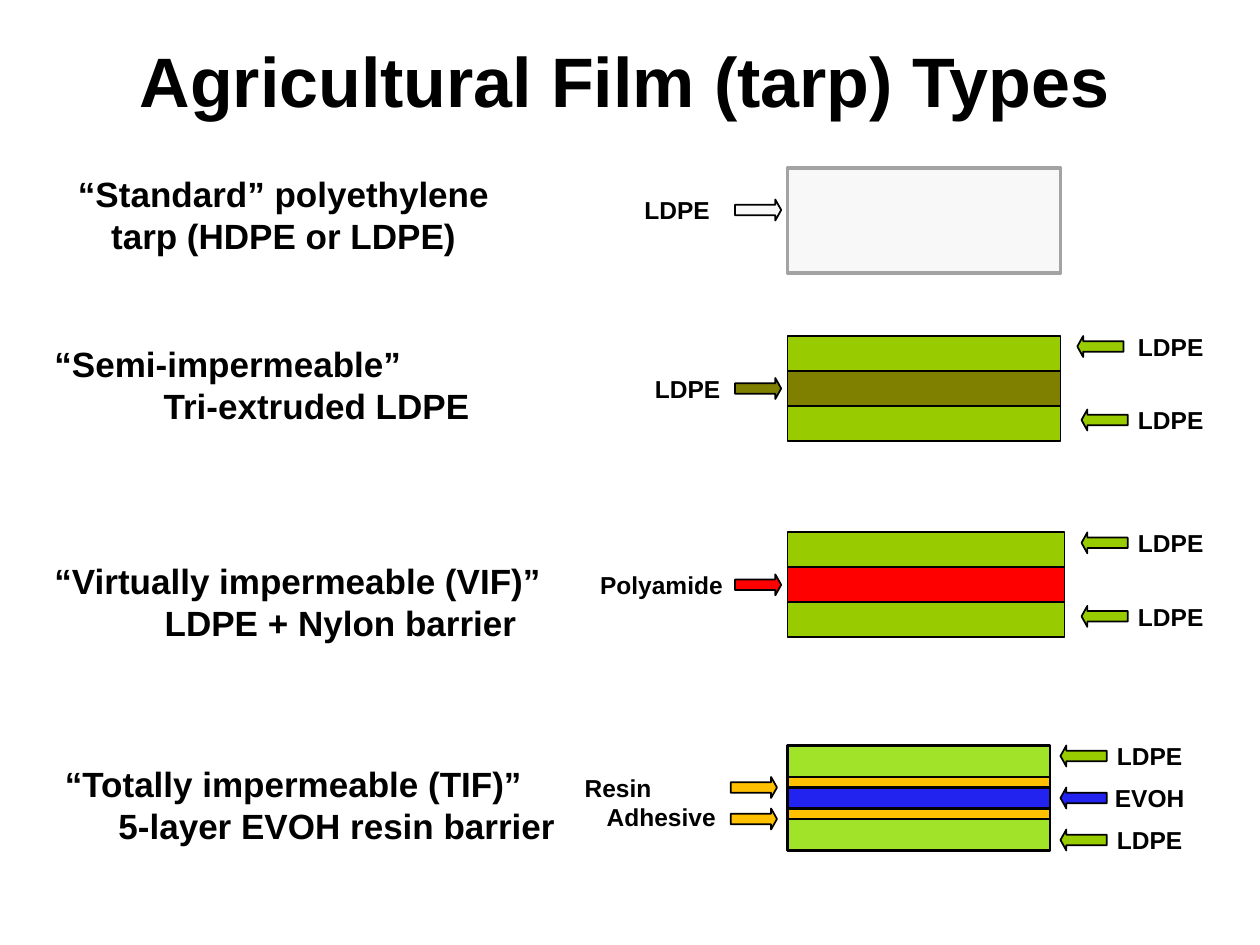
"""Build a slide that compares the layers of four agricultural film types."""
from dataclasses import dataclass
from typing import Any

from pptx import Presentation
from pptx.dml.color import RGBColor
from pptx.enum.shapes import MSO_SHAPE
from pptx.enum.text import MSO_ANCHOR, MSO_AUTO_SIZE, PP_ALIGN
from pptx.util import Emu, Inches, Pt


@dataclass(frozen=True)
class Theme:
    font: str = "Arial"
    title_size: float = 40
    name_size: float = 20
    label_size: float = 14
    text: str = "000000"
    outline: str = "000000"
    pale: str = "F8F8F8"
    pale_edge: str = "A3A3A3"
    green: str = "99CC00"
    lime: str = "A1E329"
    olive: str = "808000"
    red: str = "FF0000"
    amber: str = "FFC000"
    blue: str = "2323EF"


@dataclass(frozen=True)
class Box:
    column: float
    row: float
    columns: float
    rows: float


@dataclass(frozen=True)
class Line:
    words: str
    indent: float | None = None


@dataclass(frozen=True)
class Layer:
    color: str
    share: float = 1


@dataclass(frozen=True)
class Pointer:
    column: float
    row: float
    color: str
    leftward: bool = False


@dataclass(frozen=True)
class Label:
    box: Box
    lines: tuple[Line, ...]


@dataclass(frozen=True)
class Film:
    row: float
    columns: float
    name: Label
    layers: tuple[Layer, ...]
    pointers: tuple[Pointer, ...]
    labels: tuple[Label, ...]
    edge: str = "000000"
    edge_width: float = 1
    grouped: bool = False


THEME = Theme()
CELL = Inches(1) // 12
FILM_COLUMN, FILM_ROWS = 75, 10
POINTER_COLUMNS, POINTER_ROWS = 4.4, 2
LABEL_COLUMNS, LABEL_ROWS = 11, 4
NAME_ROWS = 9.2


def word(text: str, column: float, row: float, columns: float = LABEL_COLUMNS) -> Label:
    """Return a centred one-line label."""
    return Label(Box(column, row, columns, LABEL_ROWS), (Line(text),))


FILMS = (
    Film(
        16, 26,
        Label(Box(4, -0.2, 46, NAME_ROWS), (Line("“Standard” polyethylene tarp (HDPE or LDPE)"),)),
        (Layer(THEME.pale),),
        (Pointer(70, 3, THEME.pale),),
        (word("LDPE", 59, 2),),
        edge=THEME.pale_edge, edge_width=2,
    ),
    Film(
        32, 26,
        Label(Box(4, 0, 46, NAME_ROWS), (Line("“Semi-impermeable”", 0), Line("Tri-extruded LDPE", 10.4))),
        (Layer(THEME.green), Layer(THEME.olive), Layer(THEME.green)),
        (Pointer(70, 4, THEME.olive), Pointer(102.6, 0, THEME.green, True),
         Pointer(103, 7, THEME.green, True)),
        (word("LDPE", 60, 3), word("LDPE", 106, -1), word("LDPE", 106, 6)),
        grouped=True,
    ),
    Film(
        50.7, 26.4,
        Label(Box(4, 2, 50, NAME_ROWS),
              (Line("“Virtually impermeable (VIF)”", 0), Line("LDPE + Nylon barrier", 10.5))),
        (Layer(THEME.green), Layer(THEME.red), Layer(THEME.green)),
        (Pointer(70, 4, THEME.red), Pointer(103, 0, THEME.green, True),
         Pointer(103, 7, THEME.green, True)),
        (word("Polyamide", 51, 3, 24), word("LDPE", 106, -1), word("LDPE", 106, 6)),
        grouped=True,
    ),
    Film(
        71, 25,
        Label(Box(5, 1, 50, NAME_ROWS),
              (Line("“Totally impermeable (TIF)”", 0), Line("5-layer EVOH resin barrier", 5.1))),
        (Layer(THEME.lime, 3), Layer(THEME.amber), Layer(THEME.blue, 2),
         Layer(THEME.amber), Layer(THEME.lime, 3)),
        (Pointer(69.6, 3, THEME.amber), Pointer(69.6, 6, THEME.amber),
         Pointer(101, 0, THEME.green, True), Pointer(101, 4, THEME.blue, True),
         Pointer(101, 8, THEME.green, True)),
        (Label(Box(51, 2, 24, 6.8), (Line("Resin", 3.5), Line("Adhesive", 5.6))),
         word("LDPE", 104, -1), word("EVOH", 104, 3), word("LDPE", 104, 7)),
        edge_width=1.5,
    ),
)


def set_formats(target: Any, formats: dict[str, Any]) -> None:
    """Set each named attribute of the target."""
    for attribute, value in formats.items():
        setattr(target, attribute, value)


def cells(count: float) -> Emu:
    """Turn a count of grid cells into a length."""
    return Emu(round(count * CELL))


def place(box: Box, top: float = 0) -> tuple[Emu, Emu, Emu, Emu]:
    """Return left, top, width and height of a box below a grid row."""
    return cells(box.column), cells(top + box.row), cells(box.columns), cells(box.rows)


def write(frame: Any, lines: tuple[Line, ...], size: float) -> None:
    """Fill a text frame with bold lines, centred unless indented."""
    set_formats(frame, {"word_wrap": True, "auto_size": MSO_AUTO_SIZE.NONE,
                        "vertical_anchor": MSO_ANCHOR.TOP})
    for index, line in enumerate(lines):
        paragraph = frame.add_paragraph() if index else frame.paragraphs[0]
        paragraph.alignment = PP_ALIGN.CENTER if line.indent is None else PP_ALIGN.LEFT
        if line.indent:
            paragraph._p.get_or_add_pPr().set("marL", str(cells(line.indent)))
        run = paragraph.add_run()
        run.text = line.words
        set_formats(run.font, {"name": THEME.font, "size": Pt(size), "bold": True})
        run.font.color.rgb = RGBColor.from_string(THEME.text)


def draw_label(shapes: Any, label: Label, top: float, size: float) -> None:
    """Add a text box below a grid row."""
    write(shapes.add_textbox(*place(label.box, top)).text_frame, label.lines, size)


def draw_shape(shapes: Any, kind: MSO_SHAPE, box: Box, top: float,
               fill: str, edge: str, edge_width: float) -> Any:
    """Add a filled and outlined preset shape."""
    shape = shapes.add_shape(kind, *place(box, top))
    shape.shadow.inherit = False
    shape.fill.solid()
    shape.fill.fore_color.rgb = RGBColor.from_string(fill)
    shape.line.color.rgb = RGBColor.from_string(edge)
    shape.line.width = Pt(edge_width)
    return shape


def draw_film(shapes: Any, film: Film) -> None:
    """Add one film with its name, layers, pointers and labels."""
    stack = shapes.add_group_shape().shapes if film.grouped else shapes
    total = sum(layer.share for layer in film.layers)
    offset = 0.0
    for layer in film.layers:
        rows = FILM_ROWS * layer.share / total
        draw_shape(stack, MSO_SHAPE.RECTANGLE, Box(FILM_COLUMN, offset, film.columns, rows),
                   film.row, layer.color, film.edge, film.edge_width)
        offset += rows
    for pointer in film.pointers:
        kind = MSO_SHAPE.LEFT_ARROW if pointer.leftward else MSO_SHAPE.RIGHT_ARROW
        arrow = draw_shape(shapes, kind,
                           Box(pointer.column, pointer.row, POINTER_COLUMNS, POINTER_ROWS),
                           film.row, pointer.color, THEME.outline, 1)
        arrow.adjustments[1] = 0.28
    draw_label(shapes, film.name, film.row, THEME.name_size)
    for label in film.labels:
        draw_label(shapes, label, film.row, THEME.label_size)


def main() -> None:
    """Build and save the slide."""
    deck = Presentation()
    set_formats(deck, {"slide_width": cells(120), "slide_height": cells(90)})
    slide = deck.slides.add_slide(deck.slide_layouts[5])
    title = slide.shapes.title
    set_formats(title, dict(zip(("left", "top", "width", "height"), place(Box(3, 3, 113, 9.2)))))
    write(title.text_frame, (Line("Agricultural Film (tarp) Types"),), THEME.title_size)
    for film in FILMS:
        draw_film(slide.shapes, film)
    deck.save("out.pptx")


if __name__ == "__main__":
    main()
